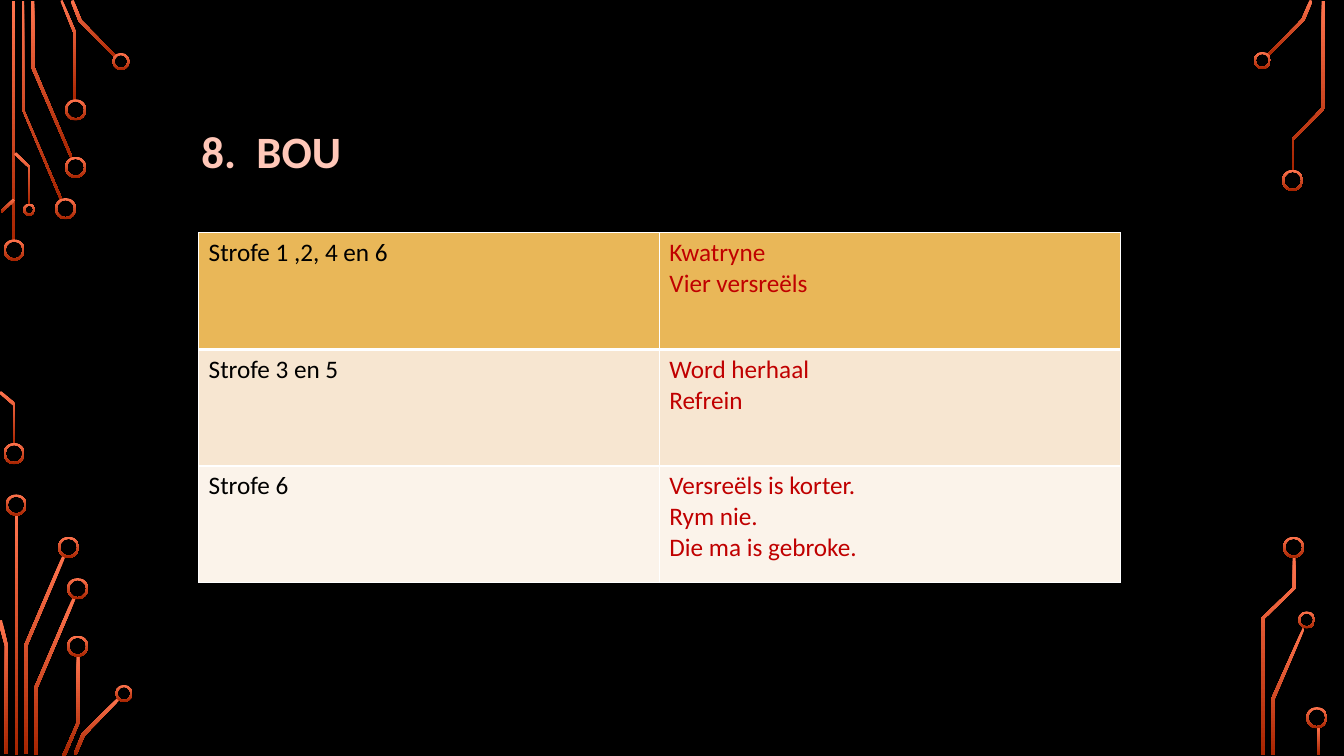
from dataclasses import dataclass

from pptx import Presentation
from pptx import util as u
from pptx.dml import color
from pptx.enum import shapes
from pptx.oxml import parse_xml
from pptx.oxml.ns import nsdecls

FONT = "Calibri"
GLOW, EMBER = "FF744E", "A62400"
BLACK, WHITE, RED, PEACH = "000000", "FFFFFF", "C00000", "FFC7B8"
RING_WALL = 0.02


@dataclass(frozen=True)
class Ring:
    x: float  # centre
    y: float
    size: float = 0.21


@dataclass(frozen=True)
class Bar:
    left: float
    top: float
    height: float
    width: float = 0.03


@dataclass(frozen=True)
class Stanza:
    name: str
    notes: tuple[str, ...]
    fill: str


# Circuit decoration: straight bars, bent traces and ring ends
BARS = [Bar(0.12, 0.01, 2.39), Bar(0.15, 5.1, 2.39), Bar(13.06, 7.21, 0.28)]

TRACES = [
    # top left
    [(0.6, 1.99), (0.22, 1.09), (0.22, 0.01), (0.24, 0.01), (0.24, 1.09), (0.62, 1.98)],
    [(0.7, 1.57), (0.31, 0.67), (0.31, 0.01), (0.34, 0.01), (0.34, 0.66), (0.72, 1.56)],
    [(0.76, 1), (0.73, 1), (0.73, 0.33), (0.6, 0.01), (0.62, 0), (0.76, 0.33)],
    [(1.15, 0.58), (0.78, 0.21), (0.7, 0.01), (0.73, 0), (0.81, 0.2), (1.16, 0.56)],
    [(0.02, 2.11), (0.01, 2.09), (0.13, 1.97), (0.15, 1.99)],
    [(0.3, 2.03), (0.28, 2.03), (0.28, 1.66), (0.14, 1.53), (0.16, 1.51), (0.3, 1.65)],
    # bottom left
    [(0.15, 4.41), (0.13, 4.41), (0.13, 4.02), (-0.01, 3.9), (0.01, 3.88), (0.15, 4)],
    [(0.27, 7.48), (0.24, 7.48), (0.24, 6.4), (0.62, 5.51), (0.65, 5.52), (0.27, 6.41)],
    [(0.08, 7.48), (0.05, 7.48), (0.05, 6.41), (-0.02, 6.16), (0.02, 6.15), (0.08, 6.41)],
    [(0.37, 7.49), (0.34, 7.49), (0.34, 6.82), (0.72, 5.93), (0.75, 5.94), (0.37, 6.83)],
    [(0.65, 7.5), (0.62, 7.49), (0.76, 7.17), (0.76, 6.5), (0.79, 6.5), (0.79, 7.17)],
    [(0.76, 7.49), (0.73, 7.48), (0.81, 7.28), (1.17, 6.92), (1.19, 6.94), (0.84, 7.3)],
    # top right
    [(12.58, 0.56), (12.56, 0.55), (12.91, 0.19), (12.99, 0), (13.02, 0.01), (12.94, 0.2)],
    [(12.83, 1.69), (12.81, 1.69), (12.81, 1.38), (13.11, 1.07), (13.11, 0.01),
     (13.14, 0.01), (13.14, 1.08), (12.83, 1.39)],
    # bottom right
    [(12.64, 7.49), (12.61, 7.49), (12.61, 6.93), (12.92, 6.23), (12.94, 6.24), (12.64, 6.94)],
    [(12.54, 7.49), (12.51, 7.49), (12.51, 6.13), (12.82, 5.83), (12.82, 5.52),
     (12.85, 5.52), (12.85, 5.84), (12.54, 6.14)],
]

RINGS = [
    Ring(0.14, 2.48), Ring(0.14, 4.5), Ring(0.65, 2.07), Ring(0.75, 1.66),
    Ring(0.75, 1.09), Ring(1.2, 0.61, 0.17), Ring(0.29, 2.08, 0.12),
    Ring(0.16, 5.01), Ring(0.68, 5.43), Ring(0.77, 5.84), Ring(0.77, 6.41),
    Ring(1.23, 6.88, 0.17), Ring(12.52, 0.6, 0.17), Ring(12.82, 1.79),
    Ring(12.96, 6.15, 0.17), Ring(12.83, 5.43), Ring(13.06, 7.12),
]

STANZAS = [
    Stanza("Strofe 1 ,2, 4 en 6", ("Kwatryne", "Vier versreëls"), "E9B758"),
    Stanza("Strofe 3 en 5", ("Word herhaal", "Refrein"), "F7E6D1"),
    Stanza("Strofe 6", ("Versreëls is korter.", "Rym nie.", "Die ma is gebroke."), "FBF3EA"),
]


def rgb(value: str) -> color.RGBColor:
    return color.RGBColor.from_string(value)


def paint_copper(part) -> None:
    """Vertical gradient, no outline, no shadow."""
    part.shadow.inherit = False
    part.fill.gradient()
    part.fill.gradient_angle = 270
    for stop, tone, position in zip(part.fill.gradient_stops, (GLOW, EMBER), (0, 1)):
        stop.color.rgb = rgb(tone)
        stop.position = position
    part.line.fill.background()


def draw_bar(slide, bar: Bar) -> None:
    box = map(u.Inches, (bar.left, bar.top, bar.width, bar.height))
    paint_copper(slide.shapes.add_shape(shapes.MSO_SHAPE.RECTANGLE, *box))


def draw_trace(slide, points: list[tuple[float, float]]) -> None:
    start, *rest = [(u.Inches(x), u.Inches(y)) for x, y in points]
    outline = slide.shapes.build_freeform(*start)
    outline.add_line_segments(rest, close=True)
    paint_copper(outline.convert_to_shape())


def draw_ring(slide, ring: Ring) -> None:
    half = ring.size / 2
    box = map(u.Inches, (ring.x - half, ring.y - half, ring.size, ring.size))
    donut = slide.shapes.add_shape(shapes.MSO_SHAPE.DONUT, *box)
    donut.adjustments[0] = RING_WALL / ring.size
    paint_copper(donut)


def format_text(frame, size: int, tone: str, bold: bool = False) -> None:
    for paragraph in frame.paragraphs:
        for run in paragraph.runs:
            run.font.name = FONT
            run.font.size = u.Pt(size)
            run.font.bold = bold
            run.font.color.rgb = rgb(tone)


def draw_title(slide, title: str) -> None:
    box = map(u.Inches, (1.9, 1.18, 8.78, 0.64))
    frame = slide.shapes.add_textbox(*box).text_frame
    frame.word_wrap = True
    frame.text = title
    format_text(frame, 32, PEACH, bold=True)


def set_borders(cell, top: int, bottom: int) -> None:
    properties = cell._tc.get_or_add_tcPr()
    for side, points in (("L", 1), ("R", 1), ("T", top), ("B", bottom)):
        properties.append(parse_xml(
            f'<a:ln{side} {nsdecls("a")} w="{u.Pt(points)}"><a:solidFill>'
            f'<a:srgbClr val="{WHITE}"/></a:solidFill></a:ln{side}>'))


def draw_stanzas(slide, stanzas: list[Stanza]) -> None:
    box = map(u.Inches, (1.97, 2.31, 9.14, 3.47))
    table = slide.shapes.add_table(len(stanzas), 2, *box).table
    table.first_row = table.horz_banding = False
    for index, stanza in enumerate(stanzas):
        columns = ((stanza.name, BLACK), ("\n".join(stanza.notes), RED))
        for cell, (words, tone) in zip(table.rows[index].cells, columns):
            # The first row is set off by a heavier rule
            set_borders(cell, top=3 if index == 1 else 1, bottom=3 if index == 0 else 1)
            cell.fill.solid()
            cell.fill.fore_color.rgb = rgb(stanza.fill)
            cell.text_frame.text = words
            format_text(cell.text_frame, 18, tone)


def main() -> None:
    deck = Presentation()
    deck.slide_width, deck.slide_height = u.Inches(13.33), u.Inches(7.5)
    slide = deck.slides.add_slide(deck.slide_layouts[6])
    slide.background.fill.solid()
    slide.background.fill.fore_color.rgb = rgb(BLACK)

    for bar in BARS:
        draw_bar(slide, bar)
    for trace in TRACES:
        draw_trace(slide, trace)
    for ring in RINGS:
        draw_ring(slide, ring)

    draw_title(slide, "8.  BOU")
    draw_stanzas(slide, STANZAS)
    deck.save("out.pptx")


if __name__ == "__main__":
    main()
